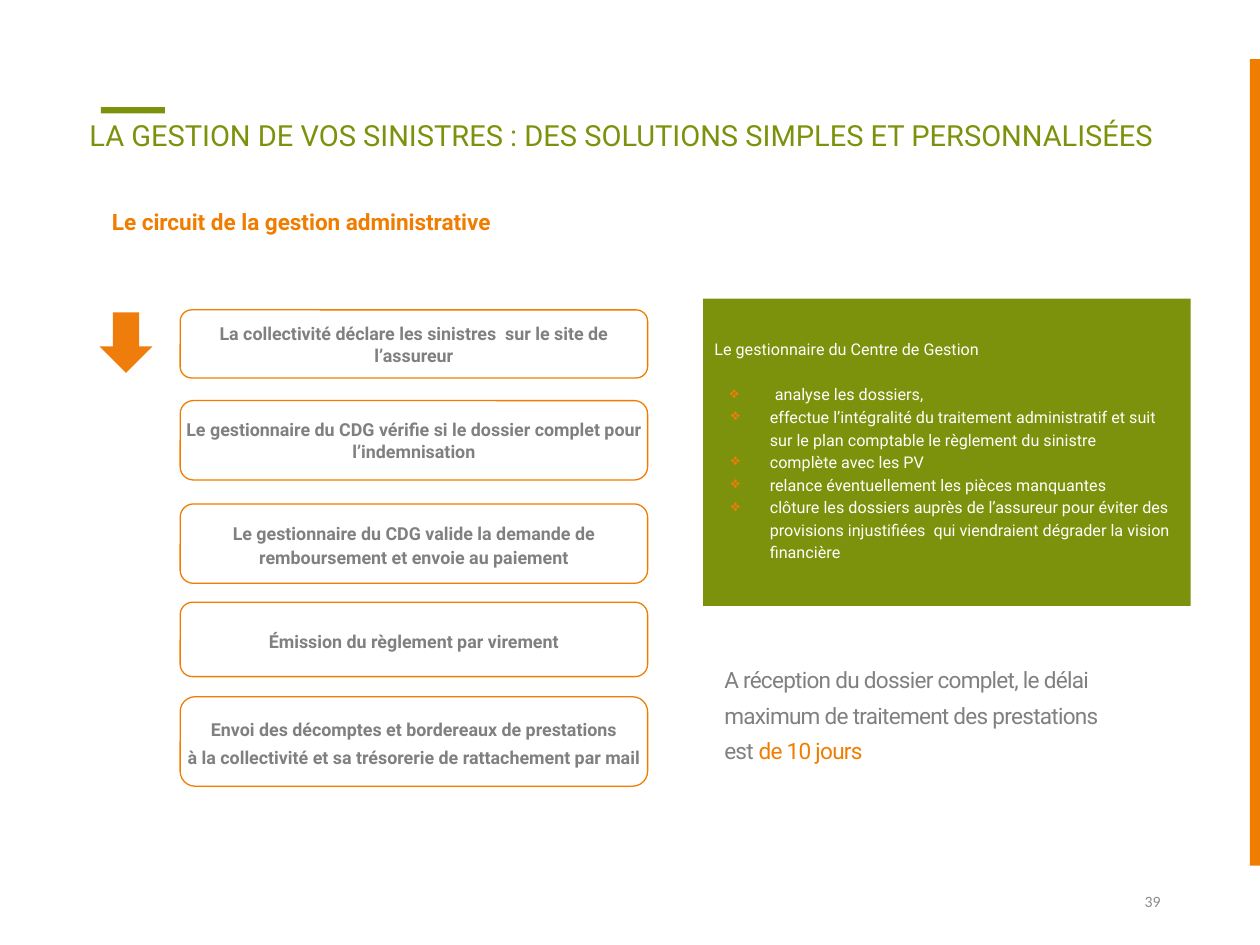
from dataclasses import dataclass

from lxml import etree
from pptx import Presentation, util as u
from pptx.dml.color import RGBColor
from pptx.enum import shapes, text
from pptx.oxml import ns

SHAPE = shapes.MSO_SHAPE
ALIGN = text.PP_ALIGN
ANCHOR = text.MSO_ANCHOR


@dataclass(frozen=True)
class Theme:
    green: str = "7D920C"
    orange: str = "F07D00"
    arrow: str = "EF7D0B"
    grey: str = "808080"
    pale_grey: str = "8C8C8C"
    white: str = "FFFFFF"
    font: str = "Roboto"
    number_font: str = "Calibri"
    title_size: float = 16.6
    lead_size: float = 12.9
    step_size: float = 10.2
    body_size: float = 9.2
    number_size: float = 9


THEME = Theme()

# Top, height, line spacing in points and paragraphs of each step
STEPS = [
    (2.46, 0.54, 12.9, ["La collectivité déclare les sinistres  sur le site de l’assureur"]),
    (3.18, 0.63, None, ["Le gestionnaire du CDG vérifie si le dossier complet pour l’indemnisation"]),
    (4.00, 0.63, 14, ["Le gestionnaire du CDG valide la demande de remboursement et envoie au paiement"]),
    (4.78, 0.59, 14, ["Émission du règlement par virement"]),
    (5.53, 0.71, 14, ["Envoi des décomptes et bordereaux de prestations",
                      "à la collectivité et sa trésorerie de rattachement par mail"]),
]

TASKS = [
    "analyse les dossiers,",
    "effectue l’intégralité du traitement administratif et suit sur le plan comptable le règlement du sinistre",
    "complète avec les PV",
    "relance éventuellement les pièces manquantes",
    "clôture les dossiers auprès de l’assureur pour éviter des provisions injustifiées  "
    "qui viendraient dégrader la vision financière",
]


def write(paragraph, content, size, color, font=THEME.font, bold=False, tracking=None,
          align=ALIGN.LEFT, line=None, before=0, after=0):
    """Append a formatted run; line, before and after are in points."""
    run = paragraph.add_run()
    run.text = content
    run.font.size = u.Pt(size)
    run.font.name = font
    run.font.bold = bold
    run.font.color.rgb = RGBColor.from_string(color)
    if tracking is not None:
        run.font._element.set("spc", str(round(tracking * 100)))
    paragraph.alignment = align
    paragraph.space_before = u.Pt(before)
    paragraph.space_after = u.Pt(after)
    if line is not None:
        paragraph.line_spacing = u.Pt(line)


def set_frame(frame, anchor, margins=(0.1, 0.05, 0.1, 0.05)):
    frame.word_wrap = True
    frame.auto_size = text.MSO_AUTO_SIZE.NONE
    frame.vertical_anchor = anchor
    (frame.margin_left, frame.margin_top,
     frame.margin_right, frame.margin_bottom) = map(u.Inches, margins)
    return frame


def add_box(slide, kind, box, fill=None, line=None):
    shape = slide.shapes.add_shape(kind, *map(u.Inches, box))
    shape.shadow.inherit = False
    if fill:
        shape.fill.solid()
        shape.fill.fore_color.rgb = RGBColor.from_string(fill)
    else:
        shape.fill.background()
    if line:
        shape.line.color.rgb = RGBColor.from_string(line)
        shape.line.width = u.Pt(0)
    else:
        shape.line.fill.background()
    return shape


def add_label(slide, box, anchor=ANCHOR.MIDDLE):
    label = slide.shapes.add_textbox(*map(u.Inches, box))
    return set_frame(label.text_frame, anchor).paragraphs[0]


def set_bullet(paragraph, margin, indent, color, character="❖"):
    properties = paragraph._p.get_or_add_pPr()
    properties.set("marL", str(u.Inches(margin)))
    properties.set("indent", str(u.Inches(indent)))
    bullet_color = etree.SubElement(properties, ns.qn("a:buClr"))
    etree.SubElement(bullet_color, ns.qn("a:srgbClr"), val=color)
    etree.SubElement(properties, ns.qn("a:buChar"), char=character)


def add_title(slide):
    title = slide.shapes.title
    title.left, title.top, title.width, title.height = map(u.Inches, (0.61, 0.9, 8.83, 0.6))
    frame = set_frame(title.text_frame, ANCHOR.TOP, (0.1, 0.06, 0.1, 0.05))
    paragraph = frame.paragraphs[0]
    write(paragraph, "LA GESTION DE VOS SINISTRES : DES SOLUTIONS SIMPLES ET PERSONNALISÉES",
          THEME.title_size, THEME.green)
    paragraph.line_spacing = 0.9


def add_step(slide, top, height, line, lines):
    shape = add_box(slide, SHAPE.ROUNDED_RECTANGLE, (1.43, top, 3.71, height), line=THEME.orange)
    frame = set_frame(shape.text_frame, ANCHOR.MIDDLE, (0, 0, 0, 0))
    for index, content in enumerate(lines):
        paragraph = frame.add_paragraph() if index else frame.paragraphs[0]
        write(paragraph, content, THEME.step_size, THEME.grey, bold=True,
              align=ALIGN.CENTER, line=line, before=2 if index else 0)


def add_manager_panel(slide):
    panel = add_box(slide, SHAPE.RECTANGLE, (5.58, 2.37, 3.87, 2.44), fill=THEME.green)
    frame = set_frame(panel.text_frame, ANCHOR.MIDDLE, (0.09, 0, 0.09, 0.05))
    spacing = 12.9
    write(frame.paragraphs[0], "Le gestionnaire du Centre de Gestion",
          THEME.body_size, THEME.white, line=spacing, after=spacing)
    for index, task in enumerate(TASKS):
        paragraph = frame.add_paragraph()
        write(paragraph, task, THEME.body_size, THEME.white, line=spacing)
        margin, indent = (0.44, -0.31) if index else (0.48, -0.36)
        set_bullet(paragraph, margin, indent, THEME.arrow)


def main():
    presentation = Presentation()
    presentation.slide_width, presentation.slide_height = u.Inches(10), u.Inches(7.5)
    slide = presentation.slides.add_slide(presentation.slide_layouts[5])

    # Accents, title and page number
    add_box(slide, SHAPE.RECTANGLE, (0.8, 0.85, 0.51, 0.05), fill=THEME.green)
    add_box(slide, SHAPE.RECTANGLE, (9.92, 0.47, 0.08, 6.4), fill=THEME.orange)
    add_title(slide)
    write(add_label(slide, (7.06, 6.95, 2.25, 0.4)), "39", THEME.number_size,
          THEME.pale_grey, font=THEME.number_font, align=ALIGN.RIGHT)

    # Administrative circuit
    write(add_label(slide, (0.79, 1.49, 4.94, 0.43)), "Le circuit de la gestion administrative",
          THEME.lead_size, THEME.orange, bold=True, line=23.1)
    add_box(slide, SHAPE.DOWN_ARROW, (0.79, 2.48, 0.42, 0.48), fill=THEME.arrow)
    for step in STEPS:
        add_step(slide, *step)

    # Manager's tasks and processing time
    add_manager_panel(slide)
    delay = add_label(slide, (5.65, 5.17, 3.24, 0.94), ANCHOR.TOP)
    for content, color in (
        ("A réception du dossier complet, le délai maximum de traitement des prestations est ", THEME.grey),
        ("de 10 jours", THEME.orange),
    ):
        write(delay, content, THEME.lead_size, color, tracking=-0.4, line=20.3)

    presentation.save("out.pptx")


if __name__ == "__main__":
    main()
